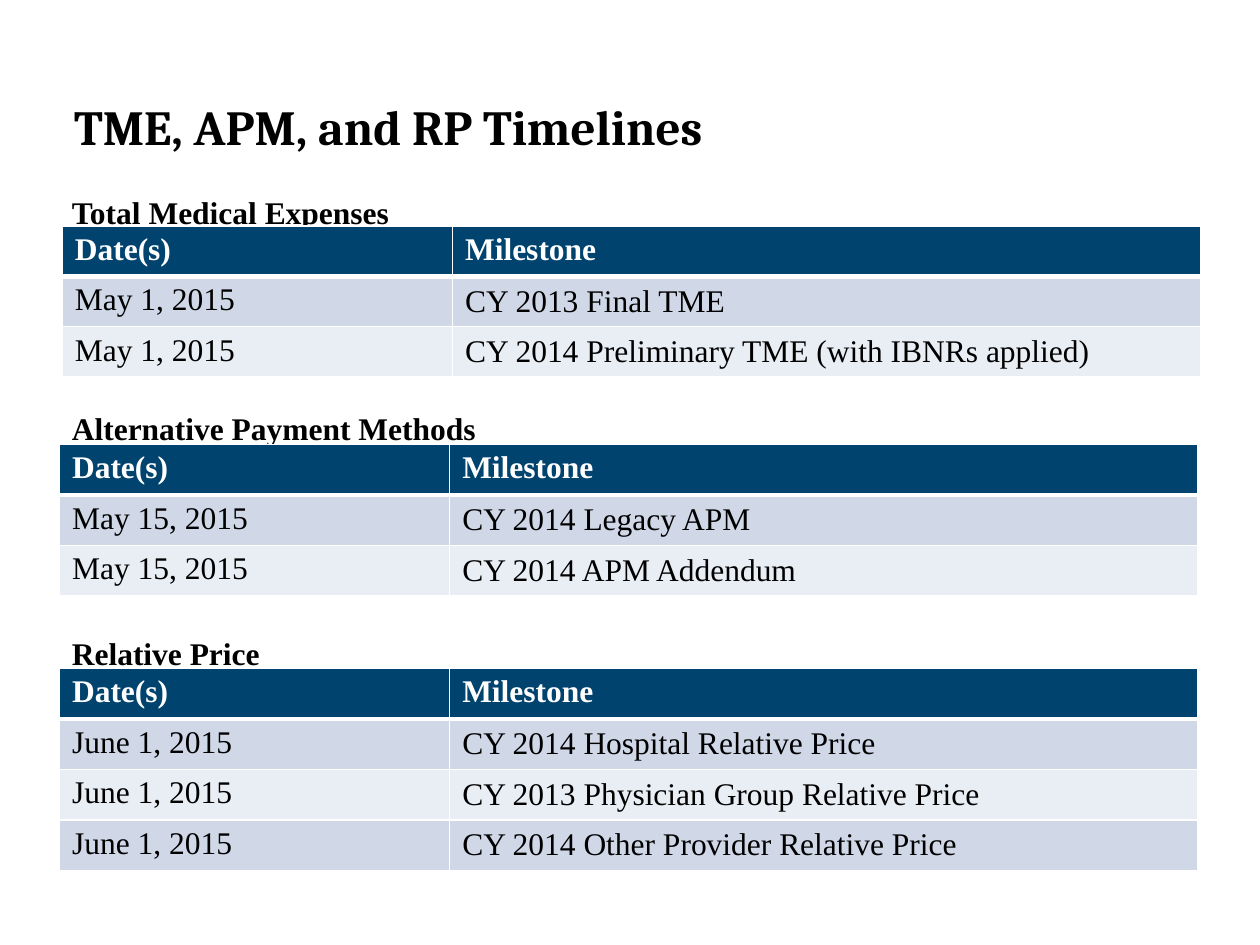
from lxml import etree
from pptx import Presentation
from pptx.dml.color import RGBColor
from pptx.enum import text
from pptx.oxml import ns
from pptx.util import Pt

THEME = {
    "title": {"name": "Cambria", "size": Pt(28), "bold": True, "ink": "000000"},
    "label": {"name": "Times New Roman", "size": Pt(18), "bold": True, "ink": "000000"},
    "head": {"name": "Times New Roman", "size": Pt(18), "bold": True, "ink": "FFFFFF"},
    "body": {"name": "Times New Roman", "size": Pt(18), "bold": False, "ink": "000000"},
    "fills": {"head": "00436E", "odd": "D0D8E8", "even": "E9EDF4"},
    "rule": "FFFFFF",
}
MID, TOP = text.MSO_ANCHOR.MIDDLE, text.MSO_ANCHOR.TOP
COLS = (Pt(223), Pt(427.4))
ROW = Pt(28.8)


def write(frame, words, style):
    para = frame.paragraphs[0]
    para.text = words
    for key, val in THEME[style].items():
        if key == "ink":
            para.font.color.rgb = RGBColor.from_string(val)
        else:
            setattr(para.font, key, val)


def border(cell, widths):
    props = cell._tc.get_or_add_tcPr()
    for spot, (side, width) in enumerate(widths.items()):
        line = etree.Element(ns.qn(f"a:ln{side}"), w=str(Pt(width)))
        fill = etree.SubElement(line, ns.qn("a:solidFill"))
        etree.SubElement(fill, ns.qn("a:srgbClr"), val=THEME["rule"])
        props.insert(spot, line)


deck = Presentation()
deck.slide_width, deck.slide_height = Pt(720), Pt(540)
slide = deck.slides.add_slide(deck.slide_layouts[6])

# Each section: label top, table left and top, milestones
sections = [
    ("Total Medical Expenses", 106.6, 35.6, 129, [
        ("May 1, 2015", "CY 2013 Final TME"),
        ("May 1, 2015", "CY 2014 Preliminary TME (with IBNRs applied)")]),
    ("Alternative Payment Methods", 230.4, 34, 254, [
        ("May 15, 2015", "CY 2014 Legacy APM"),
        ("May 15, 2015", "CY 2014 APM Addendum")]),
    ("Relative Price", 358.6, 34, 382, [
        ("June 1, 2015", "CY 2014 Hospital Relative Price"),
        ("June 1, 2015", "CY 2013 Physician Group Relative Price"),
        ("June 1, 2015", "CY 2014 Other Provider Relative Price")]),
]

# Title and section labels
boxes = [("TME, APM, and RP Timelines", 35.3, 46.8, 50.4, "title", MID)]
boxes += [(name, 34, y, 35.3, "label", TOP) for name, y, *_ in sections]
for words, x, y, high, style, anchor in boxes:
    frame = slide.shapes.add_textbox(Pt(x), Pt(y), Pt(633), Pt(high)).text_frame
    frame.word_wrap = True
    frame.vertical_anchor = anchor
    write(frame, words, style)

# Milestone tables
for name, _, x, y, dates in sections:
    rows = [("Date(s)", "Milestone")] + dates
    grid = slide.shapes.add_table(
        len(rows), len(COLS), Pt(x), Pt(y), sum(COLS), ROW * len(rows)).table
    for col, width in zip(grid.columns, COLS):
        col.width = width
    for r, row in enumerate(rows):
        grid.rows[r].height = ROW
        band = "head" if r == 0 else "odd" if r % 2 else "even"
        for c, words in enumerate(row):
            cell = grid.cell(r, c)
            cell.fill.solid()
            cell.fill.fore_color.rgb = RGBColor.from_string(THEME["fills"][band])
            cell.vertical_anchor = MID if r and c else TOP
            write(cell.text_frame, words, "body" if r else "head")
            border(cell, {"L": 1, "R": 1, "T": 3 if r == 1 else 1, "B": 1 if r else 3})

deck.save("out.pptx")
